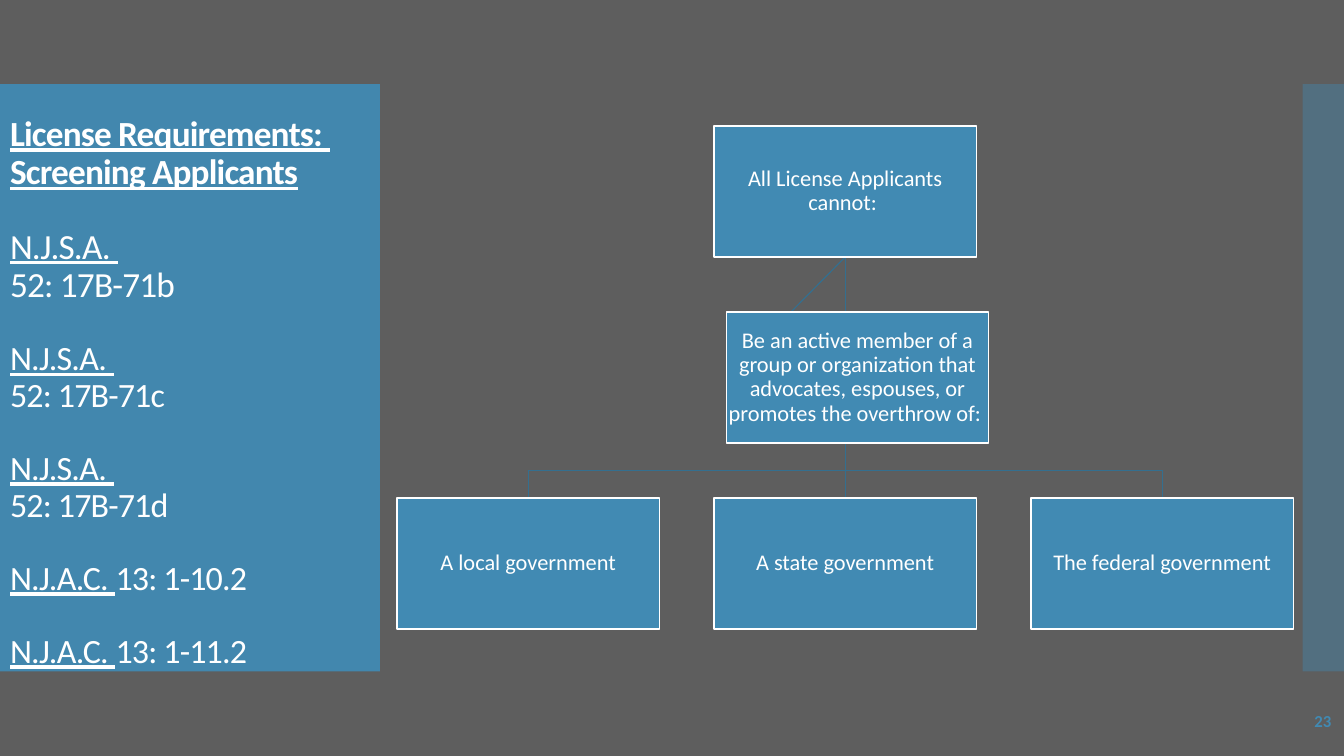
from lxml import etree
from pptx import Presentation
from pptx.dml.color import RGBColor
from pptx.enum import shapes, text
from pptx.oxml.ns import qn
from pptx.util import Pt

GREY = RGBColor(0x5E, 0x5E, 0x5E)
BLUE = RGBColor(0x41, 0x8A, 0xB3)
DARK_BLUE = RGBColor(0x34, 0x6F, 0x8F)
WHITE = RGBColor(0xFF, 0xFF, 0xFF)
LINE_WIDTH = Pt(0.85)

deck = Presentation()
deck.slide_width, deck.slide_height = Pt(960), Pt(540)
slide = deck.slides.add_slide(deck.slide_layouts[5])
slide.background.fill.solid()
slide.background.fill.fore_color.rgb = GREY
tree = slide.shapes


def add_block(left, top, width, height):
    block = tree.add_shape(shapes.MSO_SHAPE.RECTANGLE, Pt(left), Pt(top), Pt(width), Pt(height))
    block.shadow.inherit = False
    block.fill.solid()
    block.fill.fore_color.rgb = BLUE
    return block


def send_to_back(shape):
    tree._spTree.remove(shape.element)
    tree._spTree.insert(2, shape.element)


# Side panels
for left, width, opacity in [(0, 271.3, 95), (930.5, 29.5, 40)]:
    panel = add_block(left, 60, width, 419.5)
    panel.line.fill.background()
    colour = panel.element.spPr.find(qn("a:solidFill"))[0]
    etree.SubElement(colour, qn("a:alpha"), val=str(opacity * 1000))
    send_to_back(panel)

# Title with the cited statutes: (size, bold, gap above, underlined part, plain part)
title_lines = [
    (25.2, True, 0, "License Requirements: ", ""),
    (25.2, True, 0, "Screening Applicants", ""),
    (25.2, False, 26, "N.J.S.A. ", ""),
    (25.2, False, 0, "", "52: 17B-71b"),
    (24.3, False, 26, "N.J.S.A. ", ""),
    (24.3, False, 0, "", "52: 17B-71c "),
    (24.3, False, 26, "N.J.S.A. ", ""),
    (24.3, False, 0, "", "52: 17B-71d"),
    (24.3, False, 26, "N.J.A.C. ", "13: 1-10.2"),
    (24.3, False, 26, "N.J.A.C. ", "13: 1-11.2"),
]
title = tree.title
title.left, title.top, title.width, title.height = Pt(0), Pt(48), Pt(262), Pt(432)
frame = title.text_frame
frame.auto_size = text.MSO_AUTO_SIZE.NONE
frame.vertical_anchor = text.MSO_ANCHOR.TOP
frame.margin_top, frame.margin_bottom = Pt(35), Pt(0)
for index, (size, bold, gap, underlined, plain) in enumerate(title_lines):
    line = frame.add_paragraph() if index else frame.paragraphs[0]
    line.alignment = text.PP_ALIGN.LEFT
    line.line_spacing = 0.9
    line.space_before = Pt(gap)
    for wording, underline in [(underlined, True), (plain, False)]:
        if wording:
            run = line.add_run()
            run.text = wording
            run.font.color.rgb = WHITE
            run.font._element.set("spc", "-60")
            look = {"name": "Calibri", "size": Pt(size), "bold": bold, "underline": underline}
            for key, value in look.items():
                setattr(run.font, key, value)

# Hierarchy boxes
BOX_WIDTH, BOX_HEIGHT = 187.4, 93.6
COLUMNS = [283.6 + 226.4 * column for column in range(3)]
ROWS = [90 + 132.9 * row for row in range(3)]
box_texts = [
    (COLUMNS[1], ROWS[0], "All License Applicants cannot: "),
    (518.8, ROWS[1], "Be an active member of a group or organization that "
                     "advocates, espouses, or promotes the overthrow of:  "),
    (COLUMNS[0], ROWS[2], "A local government"),
    (COLUMNS[1], ROWS[2], "A state government"),
    (COLUMNS[2], ROWS[2], "The federal government"),
]
boxes = []
for left, top, wording in box_texts:
    box = add_block(left, top, BOX_WIDTH, BOX_HEIGHT)
    box.line.color.rgb = WHITE
    box.line.width = LINE_WIDTH
    frame = box.text_frame
    frame_format = {"word_wrap": True, "vertical_anchor": text.MSO_ANCHOR.MIDDLE}
    frame_format.update({f"margin_{side}": Pt(0.8) for side in ("left", "top", "right", "bottom")})
    for key, value in frame_format.items():
        setattr(frame, key, value)
    label = frame.paragraphs[0]
    label.text = wording
    label.alignment = text.PP_ALIGN.CENTER
    label.line_spacing = 0.9
    label.font.name, label.font.size = "Calibri", Pt(16)
    label.font.color.rgb = WHITE
    boxes.append(box)
applicants, membership, local, state, federal = boxes

# Straight links from the applicants box
for target, side in [(membership, 1), (state, 0)]:
    link = tree.add_connector(shapes.MSO_CONNECTOR.STRAIGHT, 0, 0, 0, 0)
    link.begin_connect(applicants, 2)
    link.end_connect(target, side)
    link.line.color.rgb = DARK_BLUE
    link.line.width = LINE_WIDTH
    etree.SubElement(link.element.spPr, qn("a:effectLst"))
    send_to_back(link)

# Bent links to the outer governments
trunk_x = applicants.left + applicants.width // 2
trunk_top = applicants.top + applicants.height
branch_y = Pt(336.2)
for government in (local, federal):
    branch_x = government.left + government.width // 2
    path_builder = tree.build_freeform(trunk_x, trunk_top)
    path_builder.add_line_segments(
        [(trunk_x, branch_y), (branch_x, branch_y), (branch_x, government.top)], close=False)
    branch = path_builder.convert_to_shape()
    branch.shadow.inherit = False
    branch.fill.background()
    branch.line.color.rgb = DARK_BLUE
    branch.line.width = LINE_WIDTH
    send_to_back(branch)

# Slide number
page = tree.add_textbox(Pt(910), Pt(504), Pt(48), Pt(22))
page.text_frame.word_wrap = True
page.text_frame.vertical_anchor = text.MSO_ANCHOR.MIDDLE
number = page.text_frame.paragraphs[0]
number.text = "23"
number.alignment = text.PP_ALIGN.RIGHT
for key, value in {"name": "Calibri", "size": Pt(12), "bold": True}.items():
    setattr(number.font, key, value)
number.font.color.rgb = BLUE

deck.save("out.pptx")
